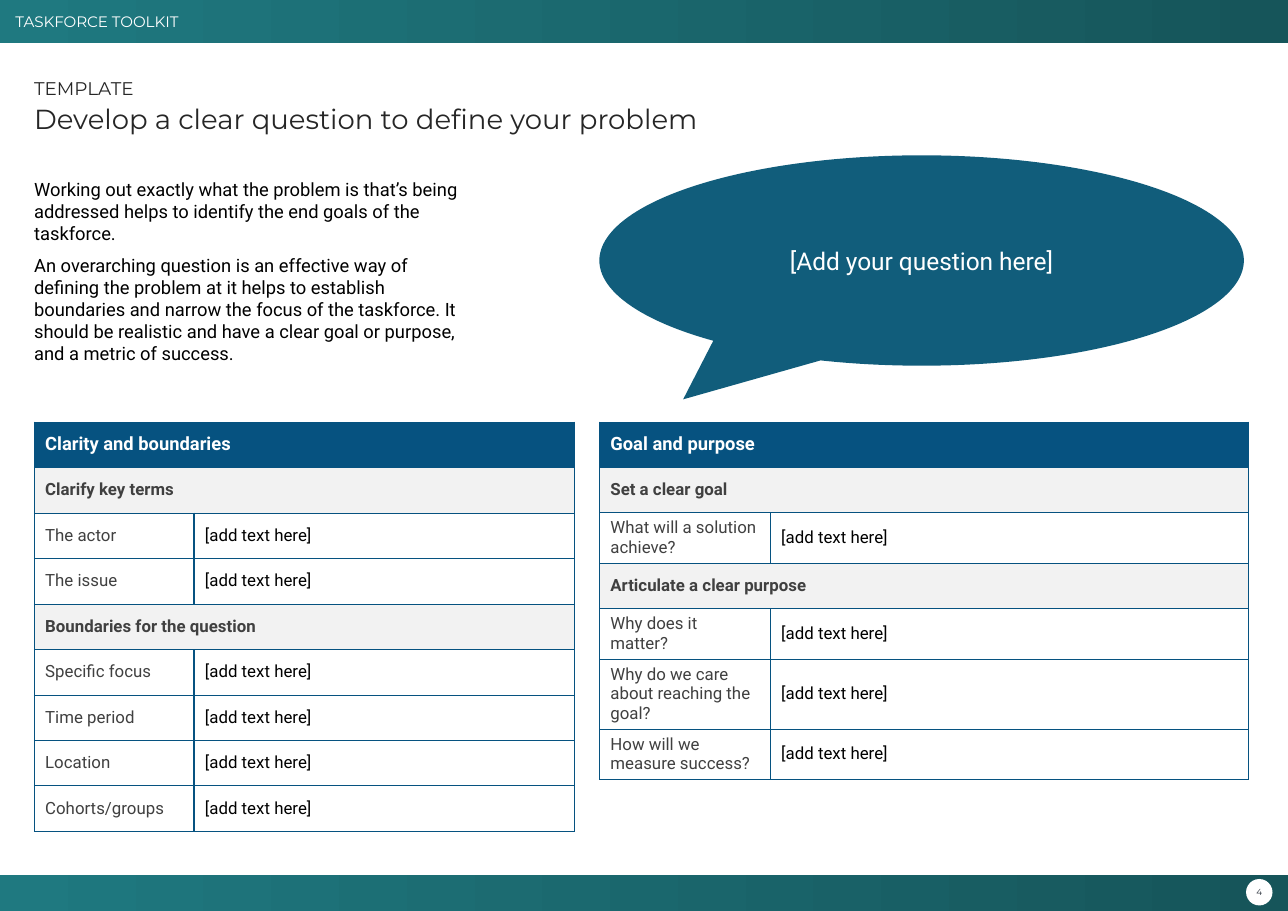
"""Build the taskforce template slide for framing a problem question."""
from dataclasses import dataclass
from typing import Any, Optional

from lxml import etree
from pptx import Presentation
from pptx import util as u
from pptx.dml.color import RGBColor
from pptx.enum import shapes, text
from pptx.oxml import ns


@dataclass(frozen=True)
class Theme:
    heading_font: str = "Montserrat"
    body_font: str = "Roboto"
    bar_start: str = "1F7980"
    bar_end: str = "16555A"
    white: str = "FFFFFF"
    black: str = "000000"
    title: str = "262626"
    label: str = "404040"
    page: str = "222A35"
    callout: str = "115D7B"
    table: str = "065280"
    section: str = "F2F2F2"
    title_size: float = 18
    question_size: float = 16
    body_size: float = 12
    cell_size: float = 11
    banner_size: float = 9.9
    page_size: float = 5.7
    thin_line: float = 0.5
    divider_line: float = 1


@dataclass(frozen=True)
class Box:
    left: float
    top: float
    width: float
    height: float

    def lengths(self) -> tuple:
        return tuple(u.Inches(v) for v in (self.left, self.top, self.width, self.height))


@dataclass(frozen=True)
class Row:
    label: str
    kind: str = "entry"


@dataclass(frozen=True)
class Grid:
    box: Box
    columns: tuple[float, float]
    rows: tuple[Row, ...]


THEME = Theme()
PROMPT = "[add text here]"
BARS = (Box(0, 0, 11.69, 0.39), Box(0, 7.94, 11.69, 0.33))
GRIDS = (
    Grid(Box(0.31, 3.83, 4.9, 3.72), (1.45, 3.45), (
        Row("Clarity and boundaries", "header"),
        Row("Clarify key terms", "section"),
        Row("The actor"),
        Row("The issue"),
        Row("Boundaries for the question", "section"),
        Row("Specific focus"),
        Row("Time period"),
        Row("Location"),
        Row("Cohorts/groups"),
    )),
    Grid(Box(5.44, 3.83, 5.89, 2.89), (1.55, 4.34), (
        Row("Goal and purpose", "header"),
        Row("Set a clear goal", "section"),
        Row("What will a solution achieve?"),
        Row("Articulate a clear purpose", "section"),
        Row("Why does it matter?"),
        Row("Why do we care about reaching the goal?"),
        Row("How will we measure success?"),
    )),
)
INTRO = (
    "Working out exactly what the problem is that’s being addressed helps to identify "
    "the end goals of the taskforce.",
    "An overarching question is an effective way of defining the problem at it helps to "
    "establish boundaries and narrow the focus of the taskforce. It should be realistic "
    "and have a clear goal or purpose, and a metric of success.",
)


def apply_format(target: Any, values: dict[str, Any]) -> None:
    for name, value in values.items():
        setattr(target, name, value)


def add_run(paragraph: Any, words: str, size: float, color: str,
            font: str = THEME.body_font, bold: bool = False) -> None:
    run = paragraph.add_run()
    run.text = words
    apply_format(run.font, {"name": font, "size": u.Pt(size), "bold": bold})
    run.font.color.rgb = RGBColor.from_string(color)


def format_frame(frame: Any, insets: tuple = (0, 0, 0, 0), wrap: bool = True,
                 anchor: Any = text.MSO_ANCHOR.MIDDLE) -> None:
    left, top, right, bottom = (u.Inches(inset) for inset in insets)
    apply_format(frame, {
        "margin_left": left, "margin_top": top, "margin_right": right,
        "margin_bottom": bottom, "word_wrap": wrap, "vertical_anchor": anchor,
        "auto_size": text.MSO_AUTO_SIZE.NONE,
    })


def add_plain_shape(slide: Any, kind: Any, box: Box, color: Optional[str] = None) -> Any:
    shape = slide.shapes.add_shape(kind, *box.lengths())
    shape.shadow.inherit = False
    shape.line.fill.background()
    if color:
        shape.fill.solid()
        shape.fill.fore_color.rgb = RGBColor.from_string(color)
    return shape


def add_bar(slide: Any, box: Box) -> Any:
    bar = add_plain_shape(slide, shapes.MSO_SHAPE.RECTANGLE, box)
    bar.fill.gradient()
    bar.fill.gradient_angle = 0
    for stop, color in zip(bar.fill.gradient_stops, (THEME.bar_start, THEME.bar_end)):
        stop.color.rgb = RGBColor.from_string(color)
    return bar


def add_title(slide: Any) -> None:
    title = slide.shapes.title
    box = Box(0.31, 0.68, 7.81, 0.74).lengths()
    apply_format(title, dict(zip(("left", "top", "width", "height"), box)))
    format_frame(title.text_frame, anchor=text.MSO_ANCHOR.TOP)
    paragraph = title.text_frame.paragraphs[0]
    apply_format(paragraph, {"alignment": text.PP_ALIGN.LEFT, "line_spacing": 1.1})
    add_run(paragraph, "TEMPLATE", THEME.body_size, THEME.title, THEME.heading_font)
    paragraph.add_line_break()
    add_run(paragraph, "Develop a clear question to define your problem",
            THEME.title_size, THEME.title, THEME.heading_font)


def add_intro(slide: Any) -> None:
    frame = slide.shapes.add_textbox(*Box(0.31, 1.62, 3.93, 1.7).lengths()).text_frame
    format_frame(frame, anchor=text.MSO_ANCHOR.TOP)
    for index, words in enumerate(INTRO):
        paragraph = frame.add_paragraph() if index else frame.paragraphs[0]
        paragraph.space_after = u.Pt(6)
        add_run(paragraph, words, THEME.body_size, THEME.black)


def add_callout(slide: Any) -> None:
    callout = add_plain_shape(slide, shapes.MSO_SHAPE.OVAL_CALLOUT,
                              Box(5.44, 1.41, 5.85, 1.91), THEME.callout)
    callout.adjustments[0], callout.adjustments[1] = -0.37, 0.66
    format_frame(callout.text_frame, (0.1, 0.05, 0.1, 0.05))
    paragraph = callout.text_frame.paragraphs[0]
    paragraph.alignment = text.PP_ALIGN.CENTER
    add_run(paragraph, "[Add your question here]", THEME.question_size, THEME.white)


def set_borders(cell: Any, divider: str) -> None:
    properties = cell._tc.get_or_add_tcPr()
    for edge in ("lnL", "lnR", "lnT", "lnB"):
        width = THEME.divider_line if edge == divider else THEME.thin_line
        line = etree.SubElement(properties, ns.qn(f"a:{edge}"), w=str(u.Pt(width)))
        fill = etree.SubElement(line, ns.qn("a:solidFill"))
        etree.SubElement(fill, ns.qn("a:srgbClr"), val=THEME.table)


def add_grid(slide: Any, grid: Grid) -> None:
    table = slide.shapes.add_table(len(grid.rows), 2, *grid.box.lengths()).table
    apply_format(table, {"first_row": False, "horz_banding": False})
    for column, width in zip(table.columns, grid.columns):
        column.width = u.Inches(width)
    fills = {"header": THEME.table, "section": THEME.section, "entry": THEME.white}
    for index, row in enumerate(grid.rows):
        label, answer = table.cell(index, 0), table.cell(index, 1)
        is_entry, is_header = row.kind == "entry", row.kind == "header"
        for cell, divider in ((label, "lnR"), (answer, "lnL")):
            set_borders(cell, divider if is_entry else "")
            cell.fill.solid()
            cell.fill.fore_color.rgb = RGBColor.from_string(fills[row.kind])
            cell.vertical_anchor = text.MSO_ANCHOR.MIDDLE
        add_run(label.text_frame.paragraphs[0], row.label,
                THEME.body_size if is_header else THEME.cell_size,
                THEME.white if is_header else THEME.label, bold=not is_entry)
        if is_entry:
            add_run(answer.text_frame.paragraphs[0], PROMPT, THEME.cell_size, THEME.black)
        else:
            label.merge(answer)


def main() -> None:
    presentation = Presentation()
    apply_format(presentation, {"slide_width": u.Inches(11.69), "slide_height": u.Inches(8.27)})
    slide = presentation.slides.add_slide(presentation.slide_layouts[5])
    banner, _ = [add_bar(slide, box) for box in BARS]
    format_frame(banner.text_frame, (0.14, 0.06, 0.07, 0.06))
    paragraph = banner.text_frame.paragraphs[0]
    paragraph.alignment = text.PP_ALIGN.LEFT
    add_run(paragraph, "TASKFORCE TOOLKIT", THEME.banner_size, THEME.white, THEME.heading_font)
    badge = add_plain_shape(slide, shapes.MSO_SHAPE.OVAL, Box(11.31, 7.98, 0.24, 0.24), THEME.white)
    format_frame(badge.text_frame, wrap=False)
    paragraph = badge.text_frame.paragraphs[0]
    paragraph.alignment = text.PP_ALIGN.CENTER
    add_run(paragraph, "4", THEME.page_size, THEME.page, THEME.heading_font)
    add_title(slide)
    add_callout(slide)
    for grid in GRIDS:
        add_grid(slide, grid)
    add_intro(slide)
    presentation.save("out.pptx")


if __name__ == "__main__":
    main()
